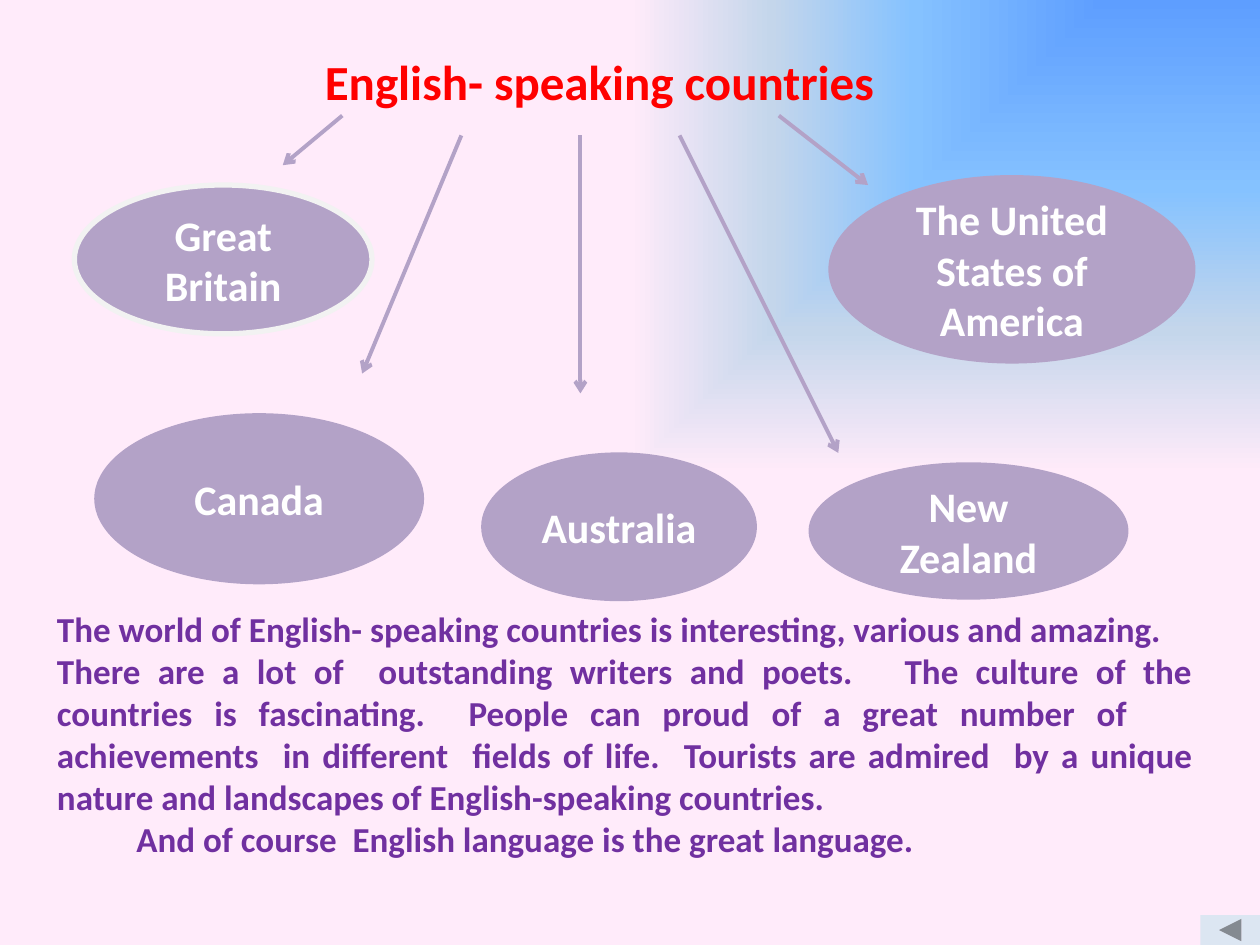
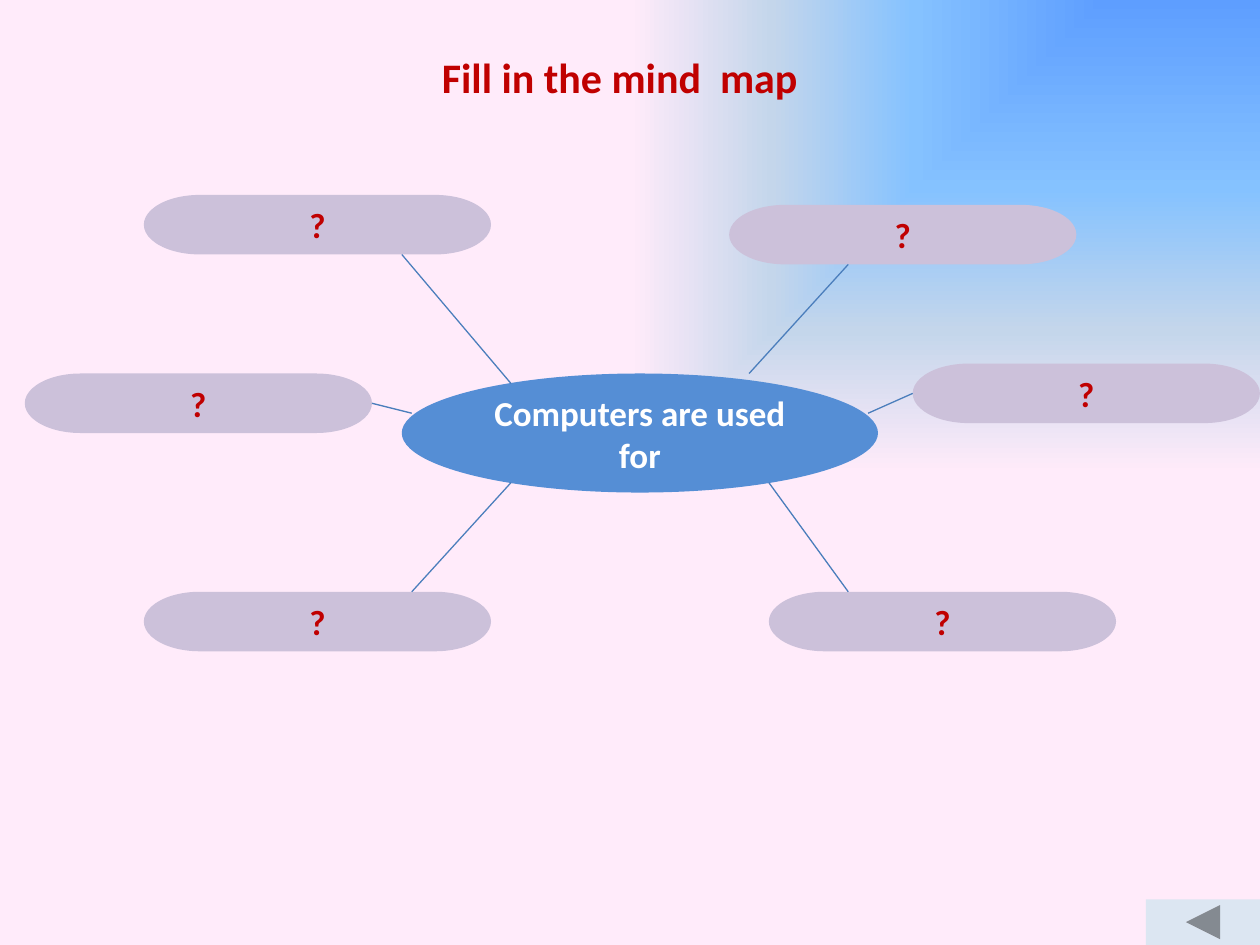
from pptx import Presentation, oxml
from pptx.dml import color
from pptx.enum import shapes, text
from pptx.oxml import ns
from pptx.util import Cm, Pt

COLORS = {
    "red": "FF0000", "dark_red": "C00000", "purple": "7030A0", "white": "FFFFFF",
    "lilac": "B3A2C7", "pale_lilac": "CCC1DA", "rim": "F2F2F2",
    "blue": "558ED5", "line_blue": "4B7EBC", "button": "DCE6F2",
}
SKY = [(0, "5E9EFF"), (40, "85C2FF"), (70, "C4D6EB"), (100, "FFEBFA")]
FONT = "Calibri"
PAGE_W, PAGE_H = 25.4, 19.05

COUNTRIES_TITLE = "English- speaking countries"
COUNTRIES = [
    ("Great Britain", (1.5, 3.73, 6, 3), (6.9, 2.33, 5.7, 3.33), "rim"),
    ("The United States of America", (16.7, 3.53, 7.4, 3.8), (15.7, 2.33, 17.5, 3.73), None),
    ("Canada", (1.9, 8.33, 6.65, 3.45), (9.3, 2.73, 7.3, 7.53), None),
    ("Australia", (9.7, 9.12, 5.56, 3), (11.7, 2.73, 11.7, 7.93), None),
    ("New Zealand", (16.3, 9.32, 6.45, 2.77), (13.7, 2.73, 16.9, 9.13), None),
]
SUMMARY = [
    "The world of English- speaking countries is interesting, various and amazing. ",
    "There are a lot of  outstanding writers and poets.   The culture of the countries is "
    "fascinating.  People can proud of a great number of    achievements  in different  "
    "fields of life.  Tourists are admired  by a unique nature and landscapes of "
    "English-speaking countries.",
    "And of course  English language is the great language.",
]

MAP_TITLE = "Fill in the mind  map"
HUB = ("Computers are used for", (8.1, 7.53, 9.6, 2.4))
BLANK_ANSWER = "?"
ANSWER_SIZE = (7, 1.2)
ANSWERS = [
    ((14.7, 4.13), (15.1, 7.53, 17.1, 5.33)),
    ((2.9, 3.93), (10.3, 7.73, 8.1, 5.13)),
    ((0.5, 7.53), (8.3, 8.33, 7.5, 8.13)),
    ((2.9, 11.93), (10.3, 9.73, 8.3, 11.93)),
    ((18.4, 7.33), (17.5, 8.33, 18.4, 7.93)),
    ((15.5, 11.93), (15.5, 9.73, 17.1, 11.93)),
]


def rgb(name):
    return color.RGBColor.from_string(COLORS[name])


def lengths(values):
    return [Cm(value) for value in values]


def write(frame, paragraphs, size, ink, align, **frame_format):
    for key, value in {"word_wrap": True, **frame_format}.items():
        setattr(frame, key, value)
    for i, words in enumerate(paragraphs):
        paragraph = frame.paragraphs[0] if i == 0 else frame.add_paragraph()
        paragraph.alignment = align
        run = paragraph.add_run()
        run.text = words
        for key, value in {"name": FONT, "size": Pt(size), "bold": True}.items():
            setattr(run.font, key, value)
        run.font.color.rgb = rgb(ink)


def add_text(slide, box, paragraphs, size, ink, align=text.PP_ALIGN.LEFT, **frame_format):
    frame = slide.shapes.add_textbox(*lengths(box)).text_frame
    write(frame, paragraphs, size, ink, align, **frame_format)
    return frame


def add_bubble(slide, preset, box, fill, words=None, size=24, ink="white", rim=None):
    bubble = slide.shapes.add_shape(preset, *lengths(box))
    bubble.shadow.inherit = False
    bubble.fill.solid()
    bubble.fill.fore_color.rgb = rgb(fill)
    if rim:
        bubble.line.color.rgb = rgb(rim)
        bubble.line.width = Pt(3)
    else:
        bubble.line.fill.background()
    if words:
        write(bubble.text_frame, [words], size, ink, text.PP_ALIGN.CENTER,
              vertical_anchor=text.MSO_ANCHOR.MIDDLE)


def add_link(slide, ends, ink, width, arrow=False):
    link = slide.shapes.add_connector(shapes.MSO_CONNECTOR.STRAIGHT, *lengths(ends))
    link.line.color.rgb = rgb(ink)
    link.line.width = Pt(width)
    if arrow:
        line = link.line._get_or_add_ln()
        line.append(oxml.parse_xml(f'<a:tailEnd {ns.nsdecls("a")} type="arrow"/>'))
    link._element.spPr.append(oxml.parse_xml(f'<a:effectLst {ns.nsdecls("a")}/>'))


def add_sky_slide(deck):
    slide = deck.slides.add_slide(deck.slide_layouts[6])
    stops = "".join(f'<a:gs pos="{at * 1000}"><a:srgbClr val="{tint}"/></a:gs>' for at, tint in SKY)
    slide.element.cSld.insert(0, oxml.parse_xml(
        f'<p:bg {ns.nsdecls("p", "a")}><p:bgPr><a:gradFill><a:gsLst>{stops}</a:gsLst>'
        '<a:path path="rect"><a:fillToRect l="100000" b="100000"/></a:path>'
        '</a:gradFill><a:effectLst/></p:bgPr></p:bg>'))
    return slide


def add_back_button(slide, width, height):
    add_bubble(slide, shapes.MSO_SHAPE.ACTION_BUTTON_BACK_OR_PREVIOUS,
               (PAGE_W - width, PAGE_H - height, width, height), "button")


def build_countries(deck):
    slide = add_sky_slide(deck)
    add_back_button(slide, 1.2, 0.6)
    add_text(slide, (6.3, 0.91, 17.2, 1.45), [COUNTRIES_TITLE], 28, "red")
    for country, oval, arrow, rim in COUNTRIES:
        add_bubble(slide, shapes.MSO_SHAPE.OVAL, oval, "lilac", country, rim=rim)
        add_link(slide, arrow, "lilac", 2.25, arrow=True)
    summary = add_text(slide, (0.9, 12.12, 23.4, 5.4), SUMMARY, 20, "purple",
                       text.PP_ALIGN.JUSTIFY)
    summary.paragraphs[-1]._p.get_or_add_pPr().set("indent", str(Cm(1.6)))


def build_mind_map(deck):
    slide = add_sky_slide(deck)
    add_text(slide, (3.5, 0.91, 14.4, 1.28), [MAP_TITLE], 24, "dark_red", margin_left=Cm(5.41))
    question, oval = HUB
    add_bubble(slide, shapes.MSO_SHAPE.OVAL, oval, "blue", question, 20)
    for corner, link in ANSWERS:
        add_bubble(slide, shapes.MSO_SHAPE.FLOWCHART_TERMINATOR, corner + ANSWER_SIZE,
                   "pale_lilac", BLANK_ANSWER, 20, "dark_red")
        add_link(slide, link, "line_blue", 0.75)
    add_back_button(slide, 2.3, 0.92)


def main():
    deck = Presentation()
    deck.slide_width, deck.slide_height = lengths((PAGE_W, PAGE_H))
    build_countries(deck)
    build_mind_map(deck)
    deck.save("out.pptx")


if __name__ == "__main__":
    main()
